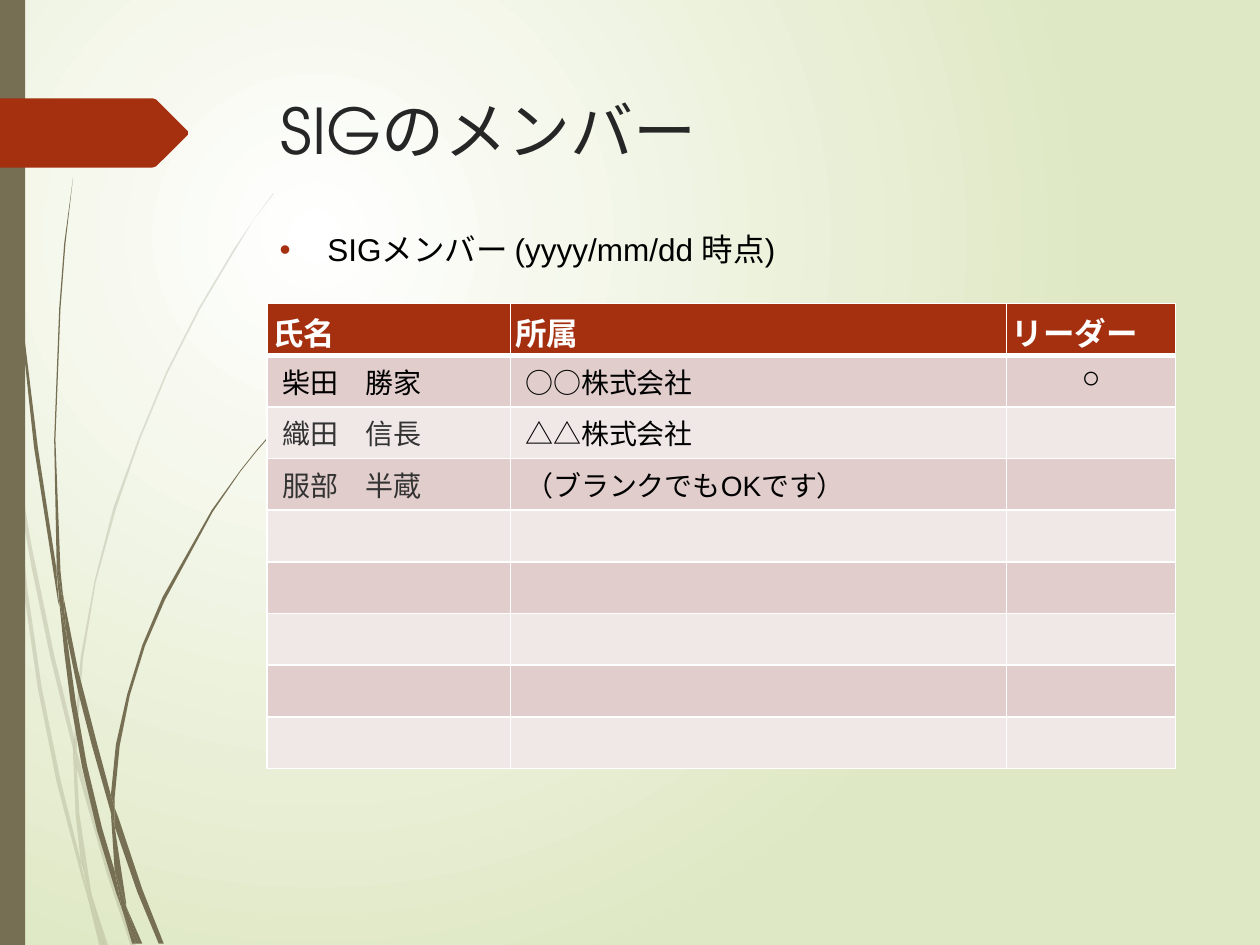
from pptx import Presentation
from pptx import util as u
from pptx.dml.color import RGBColor
from pptx.enum import shapes, text
from pptx.oxml import parse_xml
from pptx.oxml.ns import nsdecls, qn

PX = 9144  # 100 px to the inch

COLORS = {
    "white": "FFFFFF", "pale_green": "DFE8C4", "olive": "766F54", "rust": "A53010",
    "title": "262626", "black": "000000", "gray": "333333",
    "band_dark": "E1CDCC", "band_light": "F0E8E7",
}

TITLE = "SIGのメンバー"
SUBTITLE = "SIGメンバー (yyyy/mm/dd 時点)"
HEADERS = ["氏名", "所属", "リーダー"]
MEMBERS = [
    ("柴田　勝家", "○○株式会社", "○"),
    ("織田　信長", "△△株式会社", ""),
    ("服部　半蔵", "（ブランクでもOKです）", ""),
]
NAME_COLORS = ["black", "gray", "gray"]
MEMBER_ROWS = 8
COLUMN_WIDTHS = [193, 394, 134]
ROW_HEIGHT = 41

PALE_BLADES = [
    [(8, 350), (6, 322), (0, 282), (0, 299), (7, 344)],
    [(40, 522), (59, 599), (59, 586), (43, 520), (25, 433), (10, 345), (12, 376), (25, 450)],
    [(64, 607), (61, 596), (61, 610), (85, 694), (104, 751), (108, 751), (88, 692)],
    [(83, 751), (86, 751), (73, 711)],
    [(64, 683), (48, 619), (33, 545), (22, 469), (12, 376), (8, 350), (12, 410),
     (19, 470), (30, 546), (45, 621), (64, 693), (70, 714), (69, 707)],
    [(58, 599), (60, 646), (64, 683), (67, 692), (73, 711), (72, 706), (63, 646),
     (61, 610), (61, 608)],
    [(61, 584), (66, 522), (76, 462), (92, 404), (111, 349), (133, 296), (159, 245),
     (187, 198), (201, 175), (217, 154), (217, 153), (201, 175), (186, 197), (158, 244),
     (132, 295), (110, 348), (90, 403), (75, 461), (64, 522), (59, 584), (59, 586), (61, 596)],
    [(70, 714), (79, 751), (82, 751)],
    [(61, 608), (61, 610), (61, 596), (59, 586), (58, 599)],
    [(67, 692), (65, 683), (69, 707), (70, 714), (82, 751), (83, 751), (73, 711)],
]
DARK_BLADES = [
    [(5, 110), (14, 233), (27, 355), (46, 477), (47, 481), (45, 457), (45, 453),
     (30, 355), (15, 232), (6, 109), (4, 48), (3, 0), (2, 0), (3, 48)],
    [(73, 592), (88, 645), (88, 631), (77, 590), (62, 532), (50, 472), (53, 505), (62, 549)],
    [(94, 649), (91, 641), (91, 656), (109, 708), (126, 749), (130, 749), (113, 706)],
    [(91, 691), (81, 657), (69, 607), (60, 556), (53, 505), (47, 477), (51, 517),
     (56, 557), (65, 608), (77, 659), (92, 708), (97, 722), (96, 717)],
    [(50, 472), (48, 453), (44, 349), (48, 245), (52, 193), (58, 141), (51, 193),
     (47, 245), (43, 349), (45, 449), (49, 472)],
    [(110, 749), (113, 749), (100, 719)],
    [(47, 477), (53, 505), (50, 472), (49, 472), (45, 449), (45, 453)],
    [(91, 633), (95, 592), (103, 552), (115, 513), (131, 476), (169, 406), (191, 374),
     (203, 359), (216, 344), (215, 344), (203, 358), (191, 373), (168, 405), (129, 474),
     (113, 512), (101, 551), (92, 591), (88, 631), (91, 641)],
    [(97, 722), (105, 749), (108, 749)],
    [(88, 645), (91, 691), (96, 706), (100, 719), (100, 716), (91, 656), (90, 651)],
    [(88, 645), (90, 651), (91, 656), (91, 641), (88, 631), (88, 633)],
    [(96, 706), (91, 691), (96, 717), (97, 722), (108, 749), (110, 749), (100, 719)],
]
ARROW_TAB = [(149, 107), (124, 132), (121, 133), (0, 133), (0, 78), (121, 78),
             (124, 79), (149, 104)]


def px(*lengths):
    return [length * PX for length in lengths]


def rgb(name):
    return RGBColor.from_string(COLORS[name])


def paint(shape, color, opacity=100):
    shape.shadow.inherit = False
    shape.fill.solid()
    shape.fill.fore_color.rgb = rgb(color)
    shape.line.fill.background()
    if opacity < 100:
        srgb = shape.fill._xPr.find(".//" + qn("a:srgbClr"))
        srgb.append(parse_xml(f'<a:alpha {nsdecls("a")} val="{opacity * 1000}"/>'))


def add_outline(parent, points, color, opacity=100):
    builder = parent.build_freeform(*points[0], scale=PX)
    builder.add_line_segments(points[1:], close=True)
    paint(builder.convert_to_shape(), color, opacity)


def write(para, words, color, **font):
    span = para.add_run()
    span.text = words
    span.font.color.rgb = rgb(color)
    for key, value in font.items():
        setattr(span.font, key, value)


def add_text_box(page, *place):
    frame = page.shapes.add_textbox(*px(*place)).text_frame
    frame.word_wrap = True
    return frame.paragraphs[0]


def set_background(page):
    fill = page.background.fill
    fill.gradient()
    for stop, color in zip(fill.gradient_stops, ("white", "pale_green")):
        stop.color.rgb = rgb(color)
    linear = page._element.find(".//" + qn("a:lin"))
    linear.getparent().replace(linear, parse_xml(
        f'<a:path {nsdecls("a")} path="circle">'
        '<a:fillToRect l="50000" t="50000" r="100000" b="100000"/></a:path>'))


def style_cell(cell, fill, side_margin, **border_points):
    """Set margins, white borders (1 pt unless given by side) and fill."""
    cell.margin_left = cell.margin_right = side_margin * PX
    cell.margin_top = cell.margin_bottom = 4 * PX
    for side in "LRTB":
        width = u.Pt(border_points.get(side, 1))
        cell._tc.get_or_add_tcPr().append(parse_xml(
            f'<a:ln{side} {nsdecls("a")} w="{width}"><a:solidFill>'
            f'<a:srgbClr val="{COLORS["white"]}"/></a:solidFill></a:ln{side}>'))
    cell.fill.solid()
    cell.fill.fore_color.rgb = rgb(fill)


def add_member_table(page):
    count = MEMBER_ROWS + 1
    place = px(212, 241, sum(COLUMN_WIDTHS), ROW_HEIGHT * count)
    table = page.shapes.add_table(count, len(HEADERS), *place).table
    for column, width in zip(table.columns, COLUMN_WIDTHS):
        column.width = width * PX
    for row in table.rows:
        row.height = ROW_HEIGHT * PX
    for col, words in enumerate(HEADERS):
        cell = table.cell(0, col)
        style_cell(cell, "rust", 4, B=3)
        write(cell.text_frame.paragraphs[0], words, "white",
              name="Arial", size=u.Pt(18), bold=True)
    for row in range(1, count):
        for col in range(len(HEADERS)):
            style_cell(table.cell(row, col), "band_dark" if row % 2 else "band_light", 12,
                       T=3 if row == 1 else 1)
    for row, (member, name_color) in enumerate(zip(MEMBERS, NAME_COLORS), 1):
        for col, words in enumerate(member):
            if not words:
                continue
            cell = table.cell(row, col)
            para = cell.text_frame.paragraphs[0]
            leader = col == 2
            if leader:
                para.alignment = text.PP_ALIGN.CENTER
            else:
                cell.vertical_anchor = text.MSO_ANCHOR.MIDDLE
            write(para, words, "black" if col else name_color,
                  name="Arial", size=u.Pt(18 if leader else 16), bold=False)


def main():
    deck = Presentation()
    deck.slide_width, deck.slide_height = px(1000, 750)
    page = deck.slides.add_slide(deck.slide_layouts[6])
    set_background(page)

    for blades, opacity in ((PALE_BLADES, 20), (DARK_BLADES, 100)):
        group = page.shapes.add_group_shape()
        for points in blades:
            add_outline(group.shapes, points, "olive", opacity)
    bar = page.shapes.add_shape(shapes.MSO_SHAPE.RECTANGLE, *px(0, 0, 20, 750))
    paint(bar, "olive")
    add_outline(page.shapes, ARROW_TAB, "rust")

    write(add_text_box(page, 213, 68, 721, 86), TITLE, "title",
          name="TeX Gyre Adventor", size=u.Pt(36))
    add_member_table(page)

    para = add_text_box(page, 212, 178, 721, 50)
    props = para._p.get_or_add_pPr()
    props.set("marL", str(38 * PX))
    props.set("indent", str(-38 * PX))
    for bullet in (f'<a:buClr {nsdecls("a")}><a:srgbClr val="{COLORS["rust"]}"/></a:buClr>',
                   f'<a:buFont {nsdecls("a")} typeface="Arial"/>',
                   f'<a:buChar {nsdecls("a")} char="•"/>'):
        props.append(parse_xml(bullet))
    write(para, SUBTITLE, "black", name="Arial", size=u.Pt(18))

    deck.save("out.pptx")


if __name__ == "__main__":
    main()
